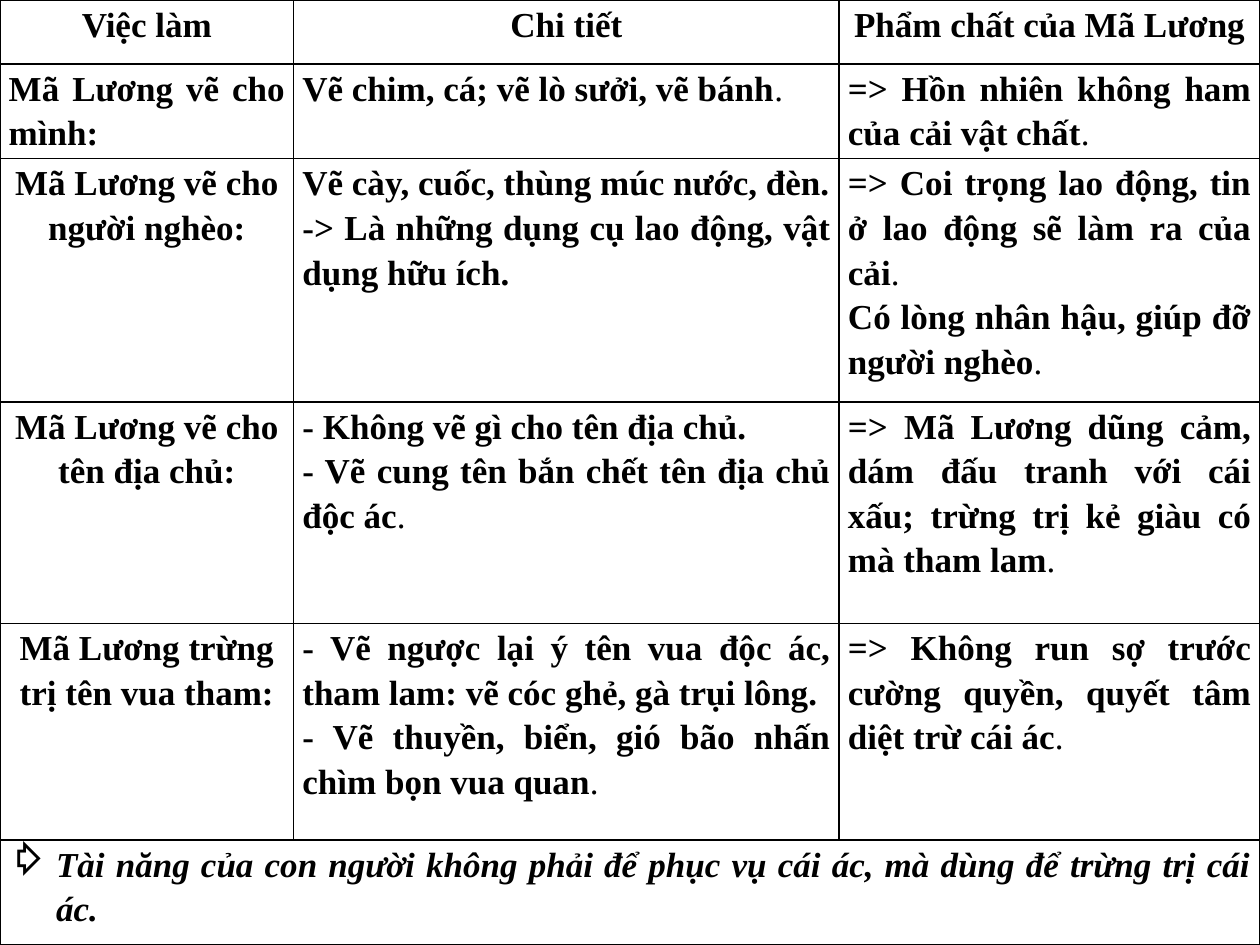
import dataclasses
import typing

import pptx
import pptx.dml.color
import pptx.enum.text
import pptx.oxml
import pptx.oxml.ns
import pptx.table
import pptx.util

Pt = pptx.util.Pt
ALIGN = pptx.enum.text.PP_ALIGN
BLACK = pptx.dml.color.RGBColor(0, 0, 0)
FONT = "Times New Roman"
WIDTHS = [167.8, 311.8, 240.4]
LIGHT = "|"


@dataclasses.dataclass
class Row:
    height: float
    cells: list[list[str]]
    aligns: tuple = (ALIGN.CENTER, ALIGN.JUSTIFY, ALIGN.JUSTIFY)


ROWS = [
    Row(36.7, [["Việc làm"], ["Chi tiết"], ["Phẩm chất của Mã Lương"]],
        (ALIGN.CENTER,) * 3),
    Row(54, [
        ["Mã Lương vẽ cho mình:"],
        ["Vẽ chim, cá; vẽ lò sưởi, vẽ bánh|."],
        ["=> Hồn nhiên không ham của cải vật chất|."],
    ], (ALIGN.JUSTIFY,) * 3),
    Row(139, [
        ["Mã Lương vẽ cho người nghèo:"],
        ["Vẽ cày, cuốc, thùng múc nước, đèn.",
         "-> Là những dụng cụ lao động, vật dụng hữu ích."],
        ["=> Coi trọng lao động, tin ở lao động sẽ làm ra của cải|.",
         "Có lòng nhân hậu, giúp đỡ người nghèo|."],
    ]),
    Row(126.7, [
        ["Mã Lương vẽ cho tên địa chủ:"],
        ["- Không vẽ gì cho tên địa chủ.",
         "- Vẽ cung tên bắn chết tên địa chủ độc ác|."],
        ["=> Mã Lương dũng cảm, dám đấu tranh với cái xấu; "
         "trừng trị kẻ giàu có mà tham lam|."],
    ]),
    Row(123.8, [
        ["Mã Lương trừng trị tên vua tham:"],
        ["- Vẽ ngược lại ý tên vua độc ác, tham lam: vẽ cóc ghẻ, gà trụi lông.",
         "- Vẽ thuyền, biển, gió bão nhấn chìm bọn vua quan|."],
        ["=> Không run sợ trước cường quyền, quyết tâm diệt trừ cái ác|."],
    ]),
]
MORAL = ("Tài năng của con người không phải để phục vụ cái ác, "
         "mà dùng để trừng trị cái ác.")
END = 59.8


def add_xml(node: typing.Any, tag: str, attrs: str, inner: str = "") -> None:
    names = pptx.oxml.ns.nsdecls("a")
    node.append(pptx.oxml.parse_xml(f"<a:{tag} {names} {attrs}>{inner}</a:{tag}>"))


def write(cell: pptx.table._Cell, lines: list[str], *, align: ALIGN,
          italic: bool = False, bullet: str = "", indent: float = 0) -> None:
    frame = cell.text_frame
    for i, line in enumerate(lines):
        para = frame.paragraphs[0] if i == 0 else frame.add_paragraph()
        para.alignment = align
        para.line_spacing = 1.15
        for j, part in enumerate(line.split(LIGHT)):
            run = para.add_run()
            run.text = part
            font = run.font
            font.name, font.size = FONT, Pt(20)
            font.bold, font.italic = j == 0, italic
            font.color.rgb = BLACK
        if bullet:
            props = para._p.get_or_add_pPr()
            props.set("marL", str(Pt(indent)))
            props.set("indent", str(-Pt(indent)))
            add_xml(props, "buChar", f'char="{bullet}"')


def style(cell: pptx.table._Cell) -> None:
    cell.margin_left = cell.margin_right = Pt(5)
    cell.margin_top = cell.margin_bottom = 0
    props = cell._tc.get_or_add_tcPr()
    ink = f'<a:solidFill><a:srgbClr val="{BLACK}"/></a:solidFill>'
    for side in "LRTB":
        add_xml(props, f"ln{side}", f'w="{Pt(1)}"', ink)
    cell.fill.background()


def main() -> None:
    deck = pptx.Presentation()
    deck.slide_width, deck.slide_height = Pt(720), Pt(540)
    slide = deck.slides.add_slide(deck.slide_layouts[6])
    heights = [row.height for row in ROWS] + [END]
    grid = slide.shapes.add_table(
        len(heights), len(WIDTHS), 0, 0, Pt(sum(WIDTHS)), Pt(sum(heights))).table
    grid.first_row = grid.horz_banding = False
    for col, width in zip(grid.columns, WIDTHS):
        col.width = Pt(width)
    for row, height in zip(grid.rows, heights):
        row.height = Pt(height)
    for cell in grid.iter_cells():
        style(cell)
    for r, row in enumerate(ROWS):
        for c, (lines, align) in enumerate(zip(row.cells, row.aligns)):
            write(grid.cell(r, c), lines, align=align)
    last = grid.cell(len(ROWS), 0)
    last.merge(grid.cell(len(ROWS), len(WIDTHS) - 1))
    write(last, [MORAL], align=ALIGN.JUSTIFY, italic=True, bullet="⇨", indent=27)
    deck.save("out.pptx")


if __name__ == "__main__":
    main()
